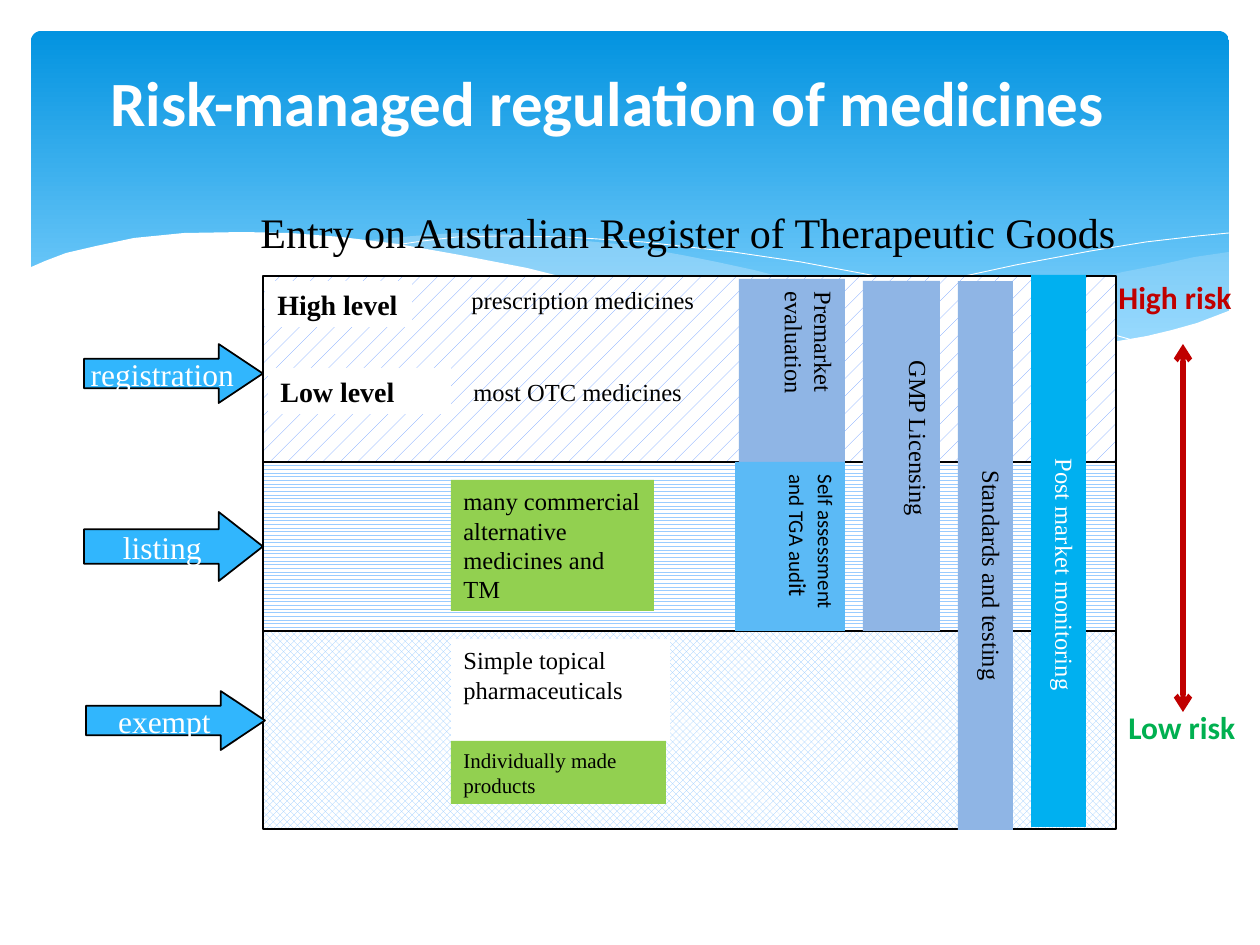
from dataclasses import dataclass

from lxml.etree import SubElement
from pptx import Presentation
from pptx.dml.color import RGBColor
from pptx.enum.dml import MSO_PATTERN
from pptx.enum.shapes import MSO_CONNECTOR, MSO_SHAPE
from pptx.enum.text import MSO_ANCHOR, PP_ALIGN
from pptx.oxml.ns import qn
from pptx.util import Emu, Pt

PX_PER_INCH = 126
SCALE = 914400 / PX_PER_INCH
SERIF = "Times New Roman"
SANS = "Calibri"


@dataclass
class Label:
    text: str
    left: int
    top: int
    width: int
    height: int
    fill: str = ""
    color: str = "000000"
    size: int = 14
    font: str = SERIF
    bold: bool = False
    wrap: bool = True
    vertical: bool = False
    indent: int = 0
    space_before: int = 0


@dataclass
class Band:
    top: int
    height: int
    pattern: MSO_PATTERN
    color: str


@dataclass
class Arrow:
    text: str
    left: int
    top: int
    height: int
    head: float


@dataclass
class Wave:
    points: list
    fill: str = ""
    alpha: int = 100


WAVES = [
    Wave([(1229, 252), (1195, 257), (1159, 265), (1123, 272), (1085, 281), (1048, 290),
          (982, 305), (919, 318), (861, 330), (833, 334), (871, 339), (922, 345),
          (969, 348), (1012, 350), (1052, 349), (1087, 347), (1120, 343), (1150, 338),
          (1178, 331), (1213, 318), (1229, 311)], "C6E7FC", 29),
    Wave([(1125, 344), (1091, 339), (1017, 328), (934, 311), (842, 291), (793, 280),
          (754, 270), (717, 262), (682, 255), (648, 249), (616, 244), (557, 238),
          (503, 234), (455, 233), (413, 236), (360, 241), (407, 247), (456, 256),
          (509, 266), (566, 280), (619, 292), (668, 302), (757, 321), (819, 333),
          (876, 340), (927, 347), (974, 349), (1017, 350), (1056, 350), (1092, 348)],
         "C6E7FC", 40),
    Wave([(389, 246), (423, 241), (457, 237), (505, 236), (567, 237), (643, 242),
          (733, 252), (801, 262), (876, 276), (958, 294), (1047, 316), (1143, 343)]),
    Wave([(772, 324), (823, 311), (876, 296), (942, 281), (1016, 265), (1091, 251),
          (1146, 242), (1198, 236), (1229, 233)]),
    Wave([(29, 268), (45, 261), (66, 253), (96, 246), (134, 238), (184, 233), (243, 232),
          (290, 233), (341, 237), (398, 244), (460, 255), (527, 268), (599, 286),
          (667, 301), (730, 315), (789, 325), (842, 334), (892, 340), (937, 345),
          (980, 348), (1019, 349), (1055, 348), (1087, 345), (1118, 341), (1147, 336),
          (1172, 330), (1197, 323), (1231, 310), (1231, 415), (29, 415)], "FFFFFF"),
]
BANDS = [
    Band(462, 169, MSO_PATTERN.ZIG_ZAG, "99CCFF"),
    Band(276, 186, MSO_PATTERN.PERCENT_5, "6699FF"),
    Band(631, 198, MSO_PATTERN.LARGE_CHECKER_BOARD, "99CCFF"),
]
ARROWS = [
    Arrow("registration", 84, 344, 59, 0.75),
    Arrow("listing", 84, 512, 69, 0.64),
    Arrow("exempt", 86, 691, 59, 0.75),
]
LABELS = [
    Label("High level", 265, 281, 147, 46, "FFFFFF", size=16, bold=True, wrap=False),
    Label("Low level", 268, 368, 183, 46, "FFFFFF", size=16, bold=True),
    Label("prescription medicines", 459, 279, 251, 43),
    Label("most OTC medicines", 461, 371, 238, 43),
    Label("many commercial\nalternative\nmedicines and TM", 451, 480, 203, 131, "92D050"),
    Label("Simple topical\npharmaceuticals", 451, 639, 219, 102, "FFFFFF"),
    Label("Individually made products", 451, 741, 215, 63, "92D050", size=12),
    Label("Premarket evaluation", 739, 279, 106, 184, "8FB5E5", vertical=True, space_before=12),
    Label("GMP Licensing", 863, 281, 77, 350, "8FB5E5", vertical=True, indent=67,
          space_before=12),
    Label("Standards and testing", 958, 281, 55, 549, "8FB5E5", vertical=True, indent=177),
    Label("Post market monitoring", 1031, 275, 55, 552, "00B0F0", "FFFFFF", vertical=True,
          indent=171),
    Label("Entry on Australian Register of Therapeutic Goods", 248, 200, 903, 63, size=24),
    Label("High risk", 1106, 272, 159, 50, color="C00000", size=18, font=SANS, bold=True),
    Label("Low risk", 1116, 702, 144, 50, color="00B050", size=18, font=SANS, bold=True),
]
SELF_ASSESSMENT = Label("Self assessment and TGA aud", 735, 462, 110, 169, "5BBAF6", size=12,
                        font=SANS, vertical=True, space_before=17)


def px(value: int) -> Emu:
    return Emu(round(value * SCALE))


def rgb(value: str) -> RGBColor:
    return RGBColor.from_string(value)


def add_run(paragraph, text: str, size: int, font: str, color: str, bold: bool = False) -> None:
    run = paragraph.add_run()
    run.text = text
    run.font.size = Pt(size)
    run.font.name = font
    run.font.bold = bold
    run.font.color.rgb = rgb(color)


def add_preset(slide, preset, left: int, top: int, width: int, height: int, line: str = ""):
    shape = slide.shapes.add_shape(preset, px(left), px(top), px(width), px(height))
    shape.shadow.inherit = False
    if line:
        shape.line.color.rgb = rgb(line)
        shape.line.width = Pt(1)
    else:
        shape.line.fill.background()
    return shape


def draw_backdrop(slide) -> None:
    panel = add_preset(slide, MSO_SHAPE.ROUNDED_RECTANGLE, 31, 31, 1198, 340)
    panel.adjustments[0] = 0.03
    panel.fill.gradient()
    panel.fill.gradient_angle = 270
    for stop, position, color in zip(panel.fill.gradient_stops, (0, 0.9), ("0293E0", "83D3FE")):
        stop.position = position
        stop.color.rgb = rgb(color)
    for wave in WAVES:
        draw_wave(slide, wave)


def draw_wave(slide, wave: Wave) -> None:
    builder = slide.shapes.build_freeform(*wave.points[0], scale=SCALE)
    builder.add_line_segments(wave.points[1:], close=bool(wave.fill))
    shape = builder.convert_to_shape()
    shape.shadow.inherit = False
    if wave.fill:
        shape.fill.solid()
        shape.fill.fore_color.rgb = rgb(wave.fill)
        shape.line.fill.background()
        color = shape.fill._xPr.find(f".//{qn('a:srgbClr')}")
        SubElement(color, qn("a:alpha"), val=str(wave.alpha * 1000))
    else:
        shape.fill.background()
        shape.line.color.rgb = rgb("FFFFFF")
        shape.line.width = Pt(0.5)


def draw_band(slide, band: Band) -> None:
    shape = add_preset(slide, MSO_SHAPE.RECTANGLE, 263, band.top, 853, band.height, "000000")
    shape.fill.patterned()
    shape.fill.pattern = band.pattern
    shape.fill.fore_color.rgb = rgb(band.color)
    shape.fill.back_color.rgb = rgb("FFFFFF")


def draw_arrow(slide, arrow: Arrow) -> None:
    shape = add_preset(slide, MSO_SHAPE.RIGHT_ARROW, arrow.left, arrow.top, 179, arrow.height,
                       "000000")
    shape.adjustments[1] = arrow.head
    shape.fill.solid()
    shape.fill.fore_color.rgb = rgb("31B6FD")
    shape.text_frame.word_wrap = False
    add_run(shape.text_frame.paragraphs[0], arrow.text, 18, SERIF, "FFFFFF")


def draw_label(slide, label: Label):
    box = label.left, label.top, label.width, label.height
    if label.fill:
        shape = add_preset(slide, MSO_SHAPE.RECTANGLE, *box)
        shape.fill.solid()
        shape.fill.fore_color.rgb = rgb(label.fill)
    else:
        shape = slide.shapes.add_textbox(*map(px, box))
    frame = shape.text_frame
    frame.word_wrap = label.wrap
    frame.vertical_anchor = MSO_ANCHOR.TOP
    if label.vertical:
        frame._txBody.bodyPr.set("vert", "vert")
    for index, text in enumerate(label.text.split("\n")):
        paragraph = frame.add_paragraph() if index else frame.paragraphs[0]
        paragraph.alignment = PP_ALIGN.LEFT
        if label.space_before:
            paragraph.space_before = Pt(label.space_before)
        if label.indent:
            paragraph._p.get_or_add_pPr().set("marL", str(px(label.indent)))
        add_run(paragraph, text, label.size, label.font, label.color, label.bold)
    return shape


def draw_risk_scale(slide) -> None:
    connector = slide.shapes.add_connector(MSO_CONNECTOR.STRAIGHT, px(1183), px(344), px(1183),
                                           px(712))
    connector.line.color.rgb = rgb("C00000")
    connector.line.width = Pt(3)
    for end in ("a:headEnd", "a:tailEnd"):
        SubElement(connector.line._get_or_add_ln(), qn(end), type="arrow")
    SubElement(connector._element.spPr, qn("a:effectLst"))


def place_title(slide) -> None:
    title = slide.shapes.title
    title.left, title.top, title.width, title.height = map(px, (64, 38, 1087, 127))
    title.text_frame.vertical_anchor = MSO_ANCHOR.MIDDLE
    paragraph = title.text_frame.paragraphs[0]
    paragraph.alignment = PP_ALIGN.CENTER
    add_run(paragraph, "Risk-managed regulation of medicines", 36, SANS, "FFFFFF", True)
    slide.shapes._spTree.append(title._element)


def main() -> None:
    presentation = Presentation()
    presentation.slide_width, presentation.slide_height = px(1260), px(945)
    slide = presentation.slides.add_slide(presentation.slide_layouts[5])
    draw_backdrop(slide)
    place_title(slide)
    for band in BANDS:
        draw_band(slide, band)
    for label in LABELS:
        draw_label(slide, label)
    assessment = draw_label(slide, SELF_ASSESSMENT)
    add_run(assessment.text_frame.paragraphs[0], "it", 14, SANS, "000000")
    for arrow in ARROWS:
        draw_arrow(slide, arrow)
    draw_risk_scale(slide)
    presentation.save("out.pptx")


if __name__ == "__main__":
    main()
